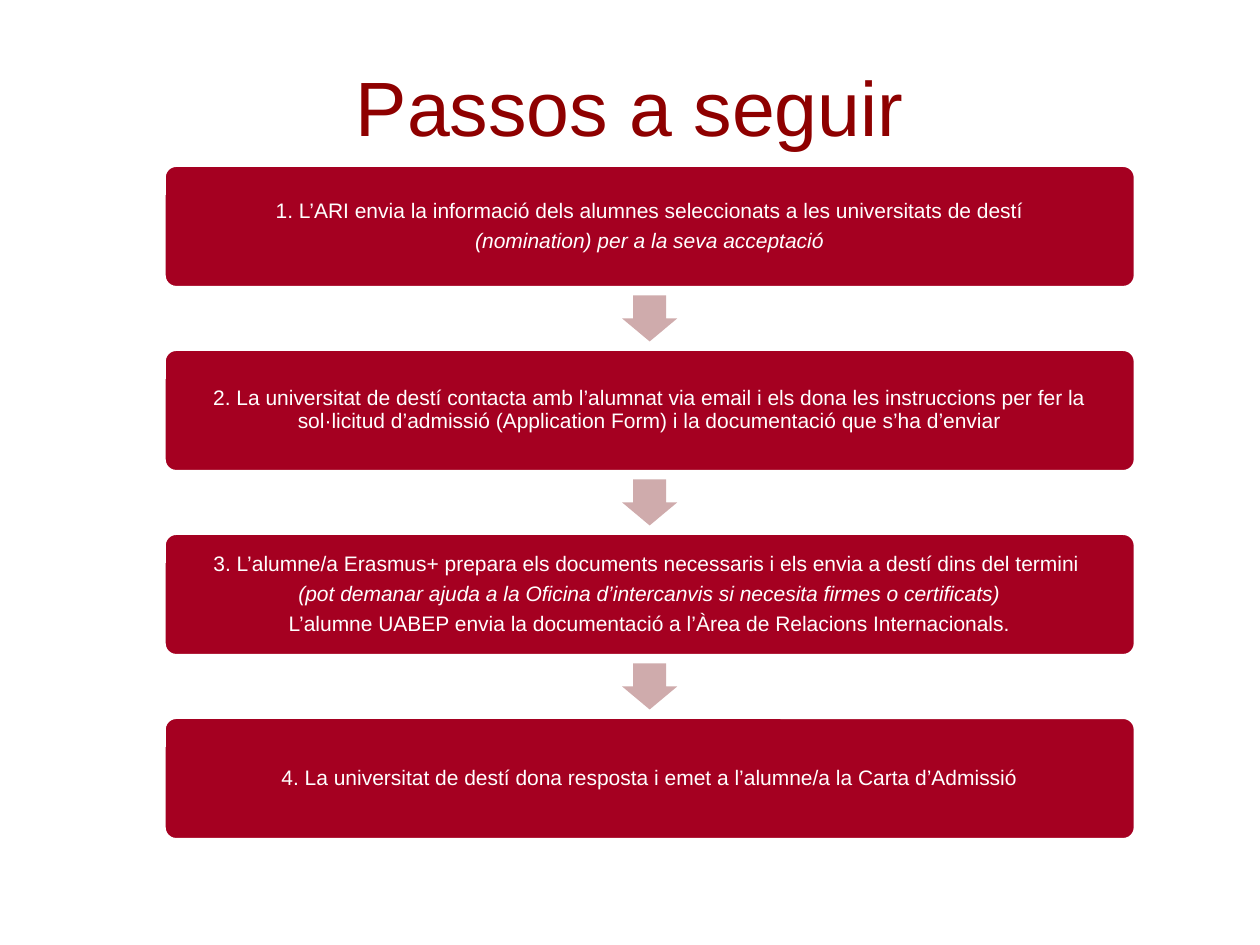
from dataclasses import dataclass

from pptx import Presentation
from pptx.dml.color import RGBColor
from pptx.enum.shapes import MSO_SHAPE
from pptx.enum.text import MSO_ANCHOR, PP_ALIGN
from pptx.shapes.autoshape import Shape
from pptx.slide import Slide
from pptx.text.text import TextFrame
from pptx.util import Pt

ROUNDED = MSO_SHAPE.ROUNDED_RECTANGLE
DOWN_ARROW = MSO_SHAPE.DOWN_ARROW
MIDDLE = MSO_ANCHOR.MIDDLE
CENTER = PP_ALIGN.CENTER

DARK_RED = RGBColor(0x8E, 0x00, 0x00)
CRIMSON = RGBColor(0xA5, 0x00, 0x21)
PALE_RED = RGBColor(0xCF, 0xAB, 0xAC)
WHITE = RGBColor(0xFF, 0xFF, 0xFF)

BOX_LEFT, FIRST_TOP = 93.7, 94.4
BOX_WIDTH, BOX_HEIGHT = 555.1, 70
STEP_PITCH = 105.15
ARROW_WIDTH, ARROW_HEIGHT = 31.5, 26.3
BOX_INSET = 5.6


@dataclass(frozen=True)
class Line:
    text: str
    italic: bool = False


STEPS: list[list[Line]] = [
    [
        Line("1. L’ARI envia la informació dels alumnes seleccionats a les universitats de destí"),
        Line("(nomination) per a la seva acceptació", italic=True),
    ],
    [
        Line("2. La universitat de destí contacta amb l’alumnat via email i els dona les "
             "instruccions per fer la sol·licitud d’admissió (Application Form) i la "
             "documentació que s’ha d’enviar"),
    ],
    [
        Line("3. L’alumne/a Erasmus+ prepara els documents necessaris i els envia a destí "
             "dins del termini "),
        Line("(pot demanar ajuda a la Oficina d’intercanvis si necesita firmes o certificats)",
             italic=True),
        Line("L’alumne UABEP envia la documentació a l’Àrea de Relacions Internacionals."),
    ],
    [
        Line("4. La universitat de destí dona resposta i emet a l’alumne/a la Carta d’Admissió"),
    ],
]


def set_attributes(target: object, values: dict[str, object]) -> None:
    for name, value in values.items():
        setattr(target, name, value)


def write_lines(frame: TextFrame, lines: list[Line], size: float, color: RGBColor,
                paragraph_format: dict[str, object]) -> None:
    set_attributes(frame, {"word_wrap": True, "vertical_anchor": MIDDLE})
    for index, line in enumerate(lines):
        paragraph = frame.add_paragraph() if index else frame.paragraphs[0]
        set_attributes(paragraph, {"alignment": CENTER, **paragraph_format})
        run = paragraph.add_run()
        run.text = line.text
        set_attributes(run.font, {"name": "Arial", "size": Pt(size), "italic": line.italic})
        run.font.color.rgb = color


def add_filled_shape(slide: Slide, kind: MSO_SHAPE, left: float, top: float, width: float,
                     height: float, fill: RGBColor, adjustments: list[float]) -> Shape:
    shape = slide.shapes.add_shape(kind, Pt(left), Pt(top), Pt(width), Pt(height))
    shape.shadow.inherit = False
    shape.fill.solid()
    shape.fill.fore_color.rgb = fill
    for index, value in enumerate(adjustments):
        shape.adjustments[index] = value
    return shape


def add_step(slide: Slide, top: float, lines: list[Line]) -> None:
    box = add_filled_shape(slide, ROUNDED, BOX_LEFT, top, BOX_WIDTH, BOX_HEIGHT, CRIMSON, [0.1])
    box.line.color.rgb = WHITE
    box.line.width = Pt(2)
    margins = ("margin_left", "margin_top", "margin_right", "margin_bottom")
    set_attributes(box.text_frame, dict.fromkeys(margins, Pt(BOX_INSET)))
    write_lines(box.text_frame, lines, 12, WHITE,
                {"line_spacing": 0.9, "space_after": Pt(4.2)})


def add_arrow_below(slide: Slide, box_top: float) -> None:
    """Center an arrow in the gap between a step and the next one."""
    left = BOX_LEFT + (BOX_WIDTH - ARROW_WIDTH) / 2
    top = box_top + (BOX_HEIGHT + STEP_PITCH - ARROW_HEIGHT) / 2
    arrow = add_filled_shape(slide, DOWN_ARROW, left, top, ARROW_WIDTH, ARROW_HEIGHT,
                             PALE_RED, [0.6, 0.5])
    arrow.line.fill.background()


def main() -> None:
    presentation = Presentation()
    set_attributes(presentation, {"slide_width": Pt(720), "slide_height": Pt(540)})
    slide = presentation.slides.add_slide(presentation.slide_layouts[6])

    title = slide.shapes.add_textbox(Pt(54), Pt(15.1), Pt(612), Pt(90))
    write_lines(title.text_frame, [Line("Passos a seguir")], 44, DARK_RED, {})

    for index, lines in enumerate(STEPS):
        top = FIRST_TOP + index * STEP_PITCH
        add_step(slide, top, lines)
        if index < len(STEPS) - 1:
            add_arrow_below(slide, top)

    presentation.save("out.pptx")


if __name__ == "__main__":
    main()
